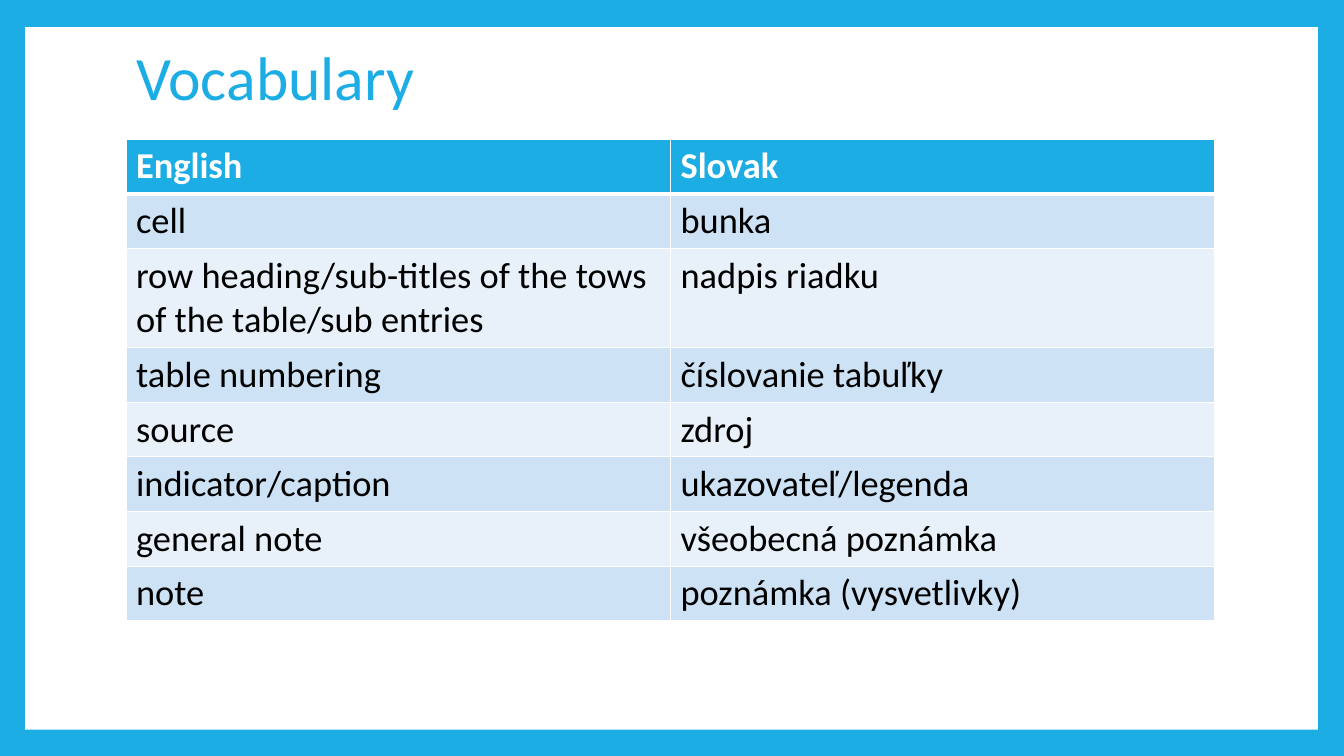
from lxml import etree
from pptx import Presentation
from pptx.dml.color import RGBColor
from pptx.enum.shapes import MSO_SHAPE
from pptx.enum.text import MSO_ANCHOR, PP_ALIGN
from pptx.oxml.ns import qn
from pptx.util import Inches, Pt

TITLE = "Vocabulary"
ROWS = [
    ("English", "Slovak"),
    ("cell", "bunka"),
    ("row heading/sub-titles of the tows of the table/sub entries", "nadpis riadku"),
    ("table numbering", "číslovanie tabuľky"),
    ("source", "zdroj"),
    ("indicator/caption", "ukazovateľ/legenda"),
    ("general note", "všeobecná poznámka"),
    ("note", "poznámka (vysvetlivky)"),
]
COLORS = {"accent": "1CADE4", "white": "FFFFFF", "black": "000000",
          "odd": "CDE3F5", "even": "E8F1FA"}
FONT = "Calibri"
LEFT, WIDTH = 1.25, 10.8
TITLE_TOP, TABLE_TOP = 0.22, 1.38
ROW_H, TALL_ROW_H, TALL_ROW = 0.54, 0.98, 2


def rgb(name):
    return RGBColor.from_string(COLORS[name])


def add_run(p, text, size, color, bold=False):
    r = p.add_run()
    r.text = text
    r.font.name, r.font.size, r.font.bold = FONT, Pt(size), bold
    r.font.color.rgb = rgb(color)


def set_borders(cell, widths):
    """Draw white borders; widths maps the sides L, R, T, B to points."""
    tcPr = cell._tc.get_or_add_tcPr()
    for i, side in enumerate("LRTB"):
        ln = etree.Element(qn(f"a:ln{side}"), w=str(Pt(widths[side])))
        fill = etree.SubElement(ln, qn("a:solidFill"))
        etree.SubElement(fill, qn("a:srgbClr"), val=COLORS["white"])
        tcPr.insert(i, ln)


prs = Presentation()
prs.slide_width, prs.slide_height = Inches(13.33), Inches(7.5)
s = prs.slides.add_slide(prs.slide_layouts[5])

# Blue frame: coloured background with a white panel behind everything
s.background.fill.solid()
s.background.fill.fore_color.rgb = rgb("accent")
panel = s.shapes.add_shape(MSO_SHAPE.RECTANGLE, Inches(0.25), Inches(0.27),
                           Inches(12.82), Inches(6.97))
panel.shadow.inherit = False
panel.fill.solid()
panel.fill.fore_color.rgb = rgb("white")
panel.line.fill.background()
s.shapes._spTree.insert(2, panel._element)

# Title
title = s.shapes.title
title.left, title.top = Inches(LEFT), Inches(TITLE_TOP)
title.width, title.height = Inches(WIDTH), Inches(TABLE_TOP - TITLE_TOP)
tf = title.text_frame
tf.word_wrap = True
tf.vertical_anchor = MSO_ANCHOR.MIDDLE
p = tf.paragraphs[0]
p.alignment, p.line_spacing = PP_ALIGN.LEFT, 0.9
add_run(p, TITLE, 44, "accent")

# Vocabulary table
heights = [TALL_ROW_H if i == TALL_ROW else ROW_H for i in range(len(ROWS))]
table = s.shapes.add_table(len(ROWS), 2, Inches(LEFT), Inches(TABLE_TOP),
                           Inches(WIDTH), Inches(sum(heights))).table
for col in table.columns:
    col.width = Inches(WIDTH / 2)
for i, words in enumerate(ROWS):
    table.rows[i].height = Inches(heights[i])
    header = i == 0
    band = "accent" if header else "odd" if i % 2 else "even"
    for j, word in enumerate(words):
        cell = table.cell(i, j)
        cell.fill.solid()
        cell.fill.fore_color.rgb = rgb(band)
        set_borders(cell, {"L": 1, "R": 1, "T": 3 if i == 1 else 1,
                           "B": 3 if header else 1})
        add_run(cell.text_frame.paragraphs[0], word, 26,
                "white" if header else "black", header)

prs.save("out.pptx")
